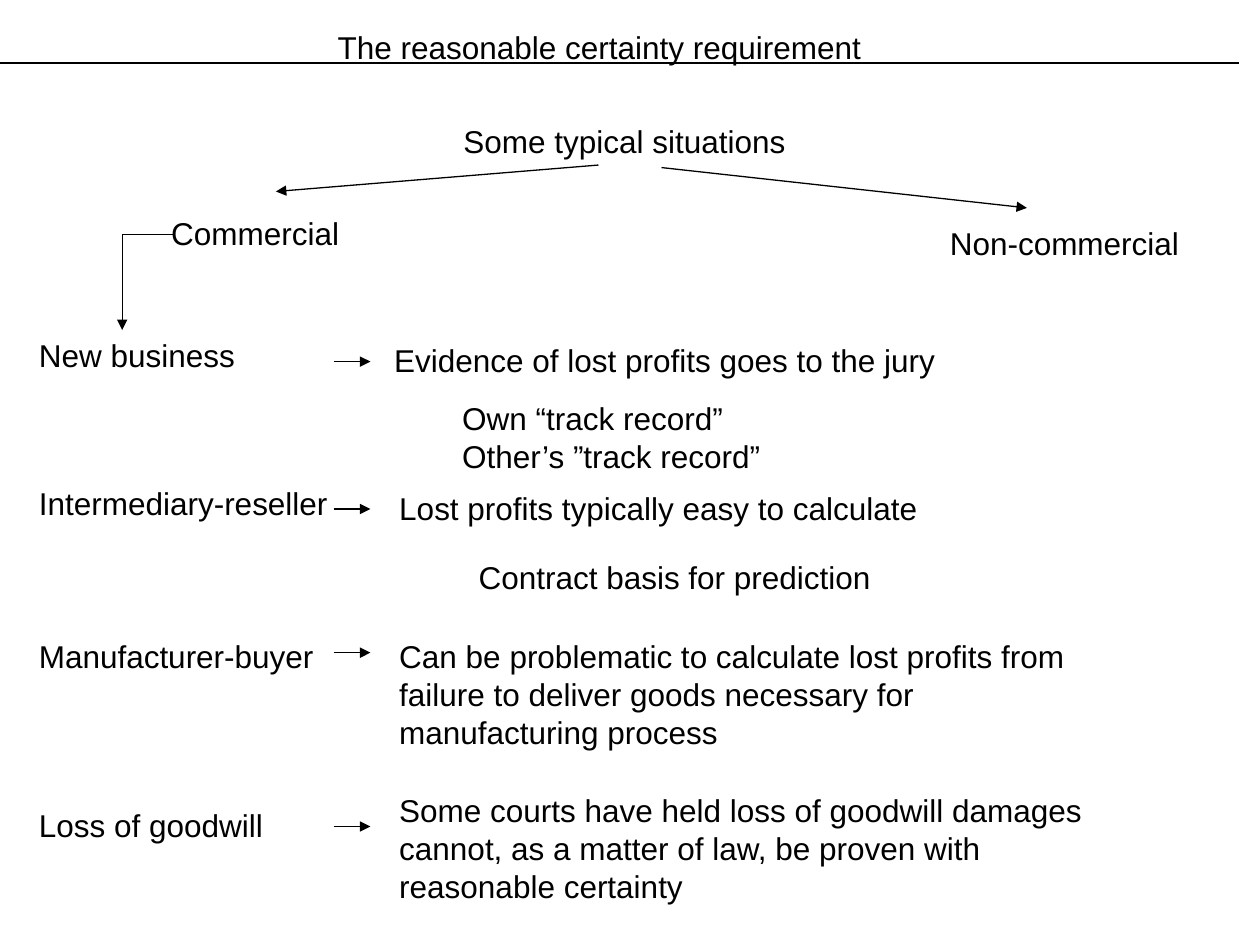
from lxml import etree
from pptx import Presentation
from pptx.dml.color import RGBColor
from pptx.enum.shapes import MSO_CONNECTOR
from pptx.enum.text import MSO_ANCHOR, MSO_AUTO_SIZE, PP_ALIGN
from pptx.oxml.ns import qn
from pptx.util import Inches, Pt

STRAIGHT = MSO_CONNECTOR.STRAIGHT
TOP = MSO_ANCHOR.TOP
LEFT = PP_ALIGN.LEFT
FIXED = MSO_AUTO_SIZE.NONE
TITLE_ONLY = 5
COLUMNS, ROWS = 100, 75


def color(value):
    return RGBColor.from_string(value)


class Diagram:
    font, size, ink, line_width = "Arial", 18, "000000", 0.75
    row_height = 4

    def __init__(self, presentation):
        self.column = presentation.slide_width / COLUMNS
        self.row = presentation.slide_height / ROWS
        self.slide = presentation.slides.add_slide(presentation.slide_layouts[TITLE_ONLY])

    def place(self, left, top, width, height):
        return (round(left * self.column), round(top * self.row),
                round(width * self.column), round(height * self.row))

    def set_text(self, shape, text, wrap=True):
        frame = shape.text_frame
        frame.text = text
        frame.word_wrap = wrap
        frame.auto_size = FIXED
        frame.vertical_anchor = TOP
        frame.margin_left = frame.margin_right = Inches(0.1)
        frame.margin_top = frame.margin_bottom = Inches(0.05)
        for paragraph in frame.paragraphs:
            paragraph.alignment = LEFT
            for run in paragraph.runs:
                run.font.name = self.font
                run.font.size = Pt(self.size)
                run.font.color.rgb = color(self.ink)

    def title(self, text, left, top, width):
        shape = self.slide.shapes.title
        shape.left, shape.top, shape.width, shape.height = self.place(
            left, top, width, self.row_height)
        self.set_text(shape, text)

    def label(self, text, left, top, width, lines=1, wrap=True):
        height = self.row_height + 3 * (lines - 1)
        shape = self.slide.shapes.add_textbox(*self.place(left, top, width, height))
        self.set_text(shape, text, wrap)

    def line(self, start, end, arrow=False):
        connector = self.slide.shapes.add_connector(
            STRAIGHT, *self.place(*start, *end))
        connector.line.color.rgb = color(self.ink)
        connector.line.width = Pt(self.line_width)
        properties = connector._element.spPr
        if arrow:
            outline = properties.find(qn("a:ln"))
            etree.SubElement(outline, qn("a:tailEnd"), type="triangle")
        etree.SubElement(properties, qn("a:effectLst"))

    def arrow(self, start, end):
        self.line(start, end, arrow=True)


def main():
    presentation = Presentation()
    presentation.slide_width = Inches(10)
    presentation.slide_height = Inches(7.5)
    diagram = Diagram(presentation)

    diagram.title("The reasonable certainty requirement", 25.8, 1.7, 49.2)
    diagram.line((0, 5), (98.3, 5))

    diagram.label("Some typical situations", 35.8, 9.2, 28.3)
    diagram.arrow((47.5, 13.1), (21.9, 15.2))
    diagram.arrow((52.5, 13.3), (81.5, 16.5))
    diagram.label("Commercial", 12.6, 16.5, 19.2)
    diagram.label("Non-commercial", 74.4, 17.3, 23.3)

    corner = (9.7, 18.6)
    diagram.line(corner, (13.9, 18.6))
    diagram.arrow(corner, (9.7, 26.2))

    situations = [
        ("New business", 26.2, 28.7),
        ("Intermediary-reseller", 37.9, 40.4),
        ("Manufacturer-buyer", 50.1, 51.8),
        ("Loss of goodwill", 63.5, 65.6),
    ]
    for name, top, arrow_row in situations:
        diagram.label(name, 2.1, top, 26.9)
        diagram.arrow((26.5, arrow_row), (29.4, arrow_row))

    diagram.label("Evidence of lost profits goes to the jury", 30.3, 26.6, 44.9, wrap=False)
    diagram.label("Own “track record”\vOther’s ”track record”", 35.7, 31.2, 31.9, lines=2)
    diagram.label("Lost profits typically easy to calculate", 30.7, 38.3, 43.1, wrap=False)
    diagram.label("Contract basis for prediction", 37, 43.8, 37)
    diagram.label("Can be problematic to calculate lost profits from failure to deliver "
                  "goods necessary for manufacturing process", 30.7, 50.1, 57.5, lines=3)
    diagram.label("Some courts have held loss of goodwill damages cannot, as a matter of "
                  "law, be proven with reasonable certainty", 30.7, 62.3, 57.1, lines=3)

    presentation.save("out.pptx")


if __name__ == "__main__":
    main()
